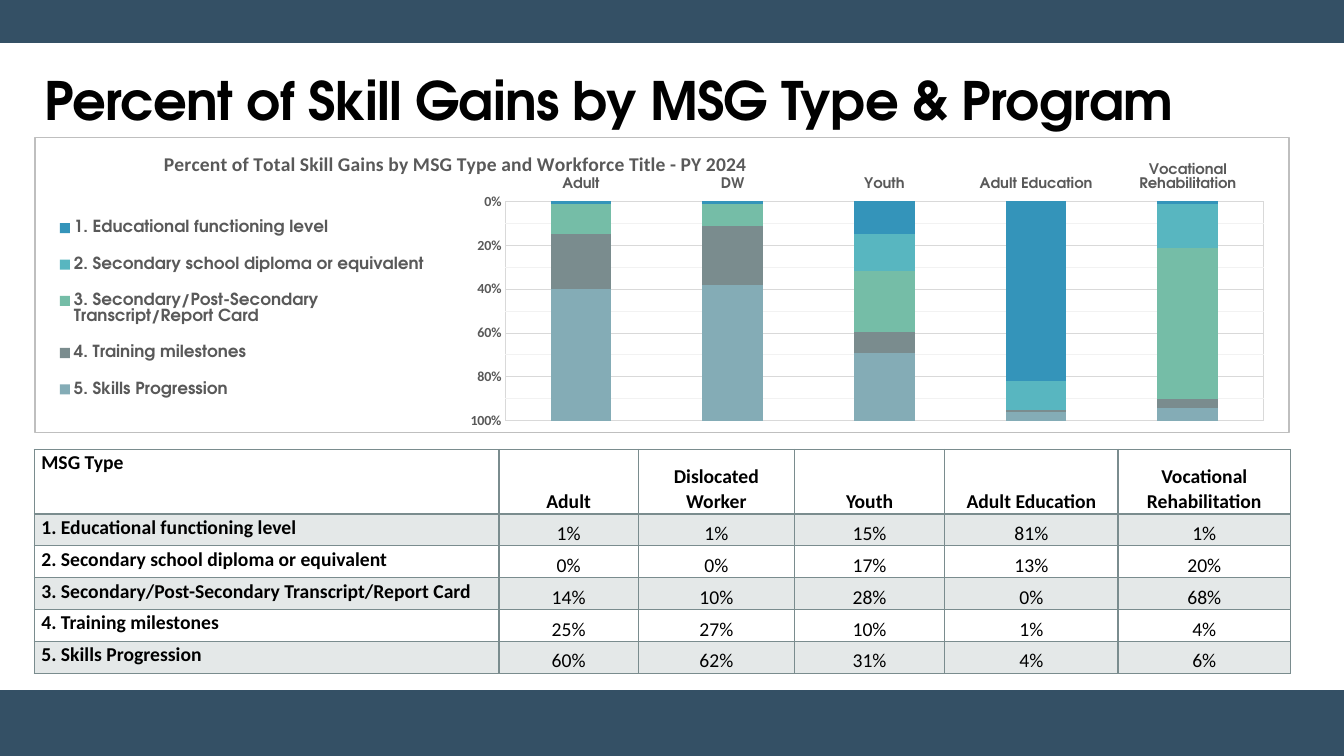
"""Build the slide on skill gains by MSG type and program."""
from lxml import etree
from pptx import Presentation
from pptx import util as u
from pptx.chart.data import CategoryChartData
from pptx.dml.color import RGBColor
from pptx.enum import chart as charts, shapes, text
from pptx.oxml import parse_xml
from pptx.oxml.ns import nsdecls, qn

NAVY = RGBColor(0x34, 0x50, 0x65)
BLACK = RGBColor(0, 0, 0)
WHITE = RGBColor(0xFF, 0xFF, 0xFF)
LABEL = RGBColor(0x59, 0x59, 0x59)
GRID = RGBColor(0xD9, 0xD9, 0xD9)
MINOR_GRID = RGBColor(0xF2, 0xF2, 0xF2)
FRAME = RGBColor(0xBF, 0xBF, 0xBF)
RULE = RGBColor(0x7A, 0x8C, 0x8E)
BAND = RGBColor(0xE4, 0xE8, 0xE8)
BLUE = RGBColor(0x34, 0x94, 0xBA)
TEAL = RGBColor(0x58, 0xB6, 0xC0)
GREEN = RGBColor(0x75, 0xBD, 0xA7)
STEEL = RGBColor(0x84, 0xAC, 0xB6)

HEADING = "Percent of Skill Gains by MSG Type & Program"
CHART_TITLE = "Percent of Total Skill Gains by MSG Type and Workforce Title - PY 2024"
PROGRAMS = ["Adult", "DW", "Youth", "Adult Education", "Vocational Rehabilitation"]
HEADER = ["MSG Type", "Adult", "Dislocated Worker", *PROGRAMS[2:]]
GAINS = [
    ("1. Educational functioning level", BLUE, (1, 1, 15, 81, 1)),
    ("2. Secondary school diploma or equivalent", TEAL, (0, 0, 17, 13, 20)),
    ("3. Secondary/Post-Secondary Transcript/Report Card", GREEN, (14, 10, 28, 0, 68)),
    ("4. Training milestones", RULE, (25, 27, 10, 1, 4)),
    ("5. Skills Progression", STEEL, (60, 62, 31, 4, 6)),
]

SLIDE_W, SLIDE_H = 13.33, 7.5
LEFT, WIDTH = 0.34, 12.45
BANDS = [(6.85, 0.65), (0, 0.42)]
COLUMNS = [4.61, 1.38, 1.55, 1.49, 1.72, 1.71]
TABLE_TOP, TABLE_H, HEADER_H = 4.46, 2.22, 0.64
PLAIN, DISPLAY = "Calibri", "TeX Gyre Adventor"


def style(target, **values):
    for name, value in values.items():
        setattr(target, name, value)


def set_font(font, size, color, face, bold=True):
    style(font, size=u.Pt(size), name=face, bold=bold)
    font.color.rgb = color


def set_line(line, color, width=0.75):
    line.color.rgb = color
    line.width = u.Pt(width)


def outline(tag, color, width):
    return (f'<a:{tag} {nsdecls("a")} w="{u.Pt(width)}"><a:solidFill>'
            f'<a:srgbClr val="{color}"/></a:solidFill></a:{tag}>')


def chart_look(fill, color, width):
    return parse_xml(f'<c:spPr {nsdecls("c", "a")}>{fill}{outline("ln", color, width)}</c:spPr>')


def place(part, index, **shares):
    for old in part.findall(qn("c:layout")):
        part.remove(old)
    layout = etree.Element(qn("c:layout"))
    manual = etree.SubElement(layout, qn("c:manualLayout"))
    if index == 0:
        etree.SubElement(manual, qn("c:layoutTarget")).set("val", "inner")
    for mode in ("xMode", "yMode"):
        etree.SubElement(manual, qn(f"c:{mode}")).set("val", "edge")
    for side, share in shares.items():
        etree.SubElement(manual, qn(f"c:{side}")).set("val", str(share))
    part.insert(index, layout)


def add_bands(slide):
    for top, height in BANDS:
        band = slide.shapes.add_shape(shapes.MSO_SHAPE.RECTANGLE, 0, u.Inches(top),
                                      u.Inches(SLIDE_W), u.Inches(height))
        band.shadow.inherit = False
        band.fill.solid()
        band.fill.fore_color.rgb = NAVY
        set_line(band.line, NAVY, 1)


def add_heading(slide):
    frame = slide.shapes.add_textbox(u.Inches(LEFT), u.Inches(0.04),
                                     u.Inches(12.66), u.Inches(1.32)).text_frame
    style(frame, word_wrap=True, vertical_anchor=text.MSO_ANCHOR.BOTTOM)
    paragraph = frame.paragraphs[0]
    paragraph.line_spacing = 0.9
    run = paragraph.add_run()
    run.text = HEADING
    set_font(run.font, 37.8, BLACK, DISPLAY)
    run.font._element.set("spc", "-50")


def add_gains_chart(slide):
    data = CategoryChartData(number_format="0")
    data.categories = PROGRAMS
    for name, _, values in GAINS:
        data.add_series(name, values)
    chart = slide.shapes.add_chart(charts.XL_CHART_TYPE.COLUMN_STACKED_100, u.Inches(LEFT),
                                   u.Inches(1.36), u.Inches(WIDTH), u.Inches(2.94), data).chart
    set_font(chart.font, 10, BLACK, PLAIN, False)
    bars = chart.plots[0]
    style(bars, gap_width=150, overlap=100, vary_by_categories=False)
    for series, (_, color, _) in zip(bars.series, GAINS):
        series.format.fill.solid()
        series.format.fill.fore_color.rgb = color

    programs, shares = chart.category_axis, chart.value_axis
    no_tick = charts.XL_TICK_MARK.NONE
    for axis in (programs, shares):
        style(axis, major_tick_mark=no_tick, minor_tick_mark=no_tick)
    programs.tick_label_position = charts.XL_TICK_LABEL_POSITION.LOW
    set_font(programs.tick_labels.font, 10.5, LABEL, DISPLAY)
    set_line(programs.format.line, GRID)
    style(shares, reverse_order=True, minimum_scale=0, maximum_scale=1, major_unit=0.2,
          minor_unit=0.1, has_major_gridlines=True, has_minor_gridlines=True)
    style(shares.tick_labels, number_format="0%", number_format_is_linked=False)
    set_font(shares.tick_labels.font, 10, LABEL, PLAIN)
    shares.format.line.fill.background()
    set_line(shares.major_gridlines.format.line, GRID)

    chart.has_title = True
    caption = chart.chart_title.text_frame
    caption.text = CHART_TITLE
    set_font(caption.paragraphs[0].runs[0].font, 14, LABEL, PLAIN)
    chart.has_legend = True
    style(chart.legend, position=charts.XL_LEGEND_POSITION.TOP, include_in_layout=False)
    set_font(chart.legend.font, 12, LABEL, DISPLAY)

    body = chart._chartSpace.find(qn("c:chart"))
    plot = body.find(qn("c:plotArea"))
    place(body.find(qn("c:title")), 1, x=0.1, y=0.03)
    place(body.find(qn("c:legend")), 1, x=0.01, y=0.21, w=0.31, h=0.74)
    place(plot, 0, x=0.375, y=0.216, w=0.605, h=0.744)
    minor_grid = plot.find(qn("c:valAx")).find(qn("c:minorGridlines"))
    minor_grid.append(chart_look("", MINOR_GRID, 0.75))
    plot.append(chart_look("<a:noFill/>", GRID, 0.75))
    white_fill = f'<a:solidFill><a:srgbClr val="{WHITE}"/></a:solidFill>'
    body.addnext(chart_look(white_fill, FRAME, 1))


def fill_cell(cell, words, row, column):
    inset = u.Inches(0.07)
    label = column == 0
    style(cell, margin_left=inset, margin_right=inset, margin_top=0, margin_bottom=0,
          vertical_anchor=text.MSO_ANCHOR.TOP if label else text.MSO_ANCHOR.BOTTOM)
    paragraph = cell.text_frame.paragraphs[0]
    style(paragraph, line_spacing=1.07, space_after=u.Pt(8),
          alignment=text.PP_ALIGN.LEFT if label else text.PP_ALIGN.CENTER)
    run = paragraph.add_run()
    run.text = words
    set_font(run.font, 14, BLACK, PLAIN, label or row == 0)
    if row % 2:
        cell.fill.solid()
        cell.fill.fore_color.rgb = BAND
    else:
        cell.fill.background()
    properties = cell._tc.get_or_add_tcPr()
    for index, side in enumerate(("lnL", "lnR", "lnT", "lnB")):
        width = 2 if row == 0 and side == "lnB" else 1
        properties.insert(index, parse_xml(outline(side, RULE, width)))


def add_gains_table(slide):
    rows = [HEADER] + [[name, *(f"{value}%" for value in values)] for name, _, values in GAINS]
    table = slide.shapes.add_table(len(rows), len(HEADER), u.Inches(LEFT), u.Inches(TABLE_TOP),
                                   u.Inches(WIDTH), u.Inches(TABLE_H)).table
    style(table, first_row=False, horz_banding=False)
    for column, width in zip(table.columns, COLUMNS):
        column.width = u.Inches(width)
    for index, row in enumerate(rows):
        height = (TABLE_H - HEADER_H) / len(GAINS) if index else HEADER_H
        table.rows[index].height = u.Inches(height)
        for column, words in enumerate(row):
            fill_cell(table.cell(index, column), words, index, column)


def main():
    deck = Presentation()
    style(deck, slide_width=u.Inches(SLIDE_W), slide_height=u.Inches(SLIDE_H))
    slide = deck.slides.add_slide(deck.slide_layouts[6])
    for add_part in (add_bands, add_heading, add_gains_chart, add_gains_table):
        add_part(slide)
    deck.save("out.pptx")


if __name__ == "__main__":
    main()
